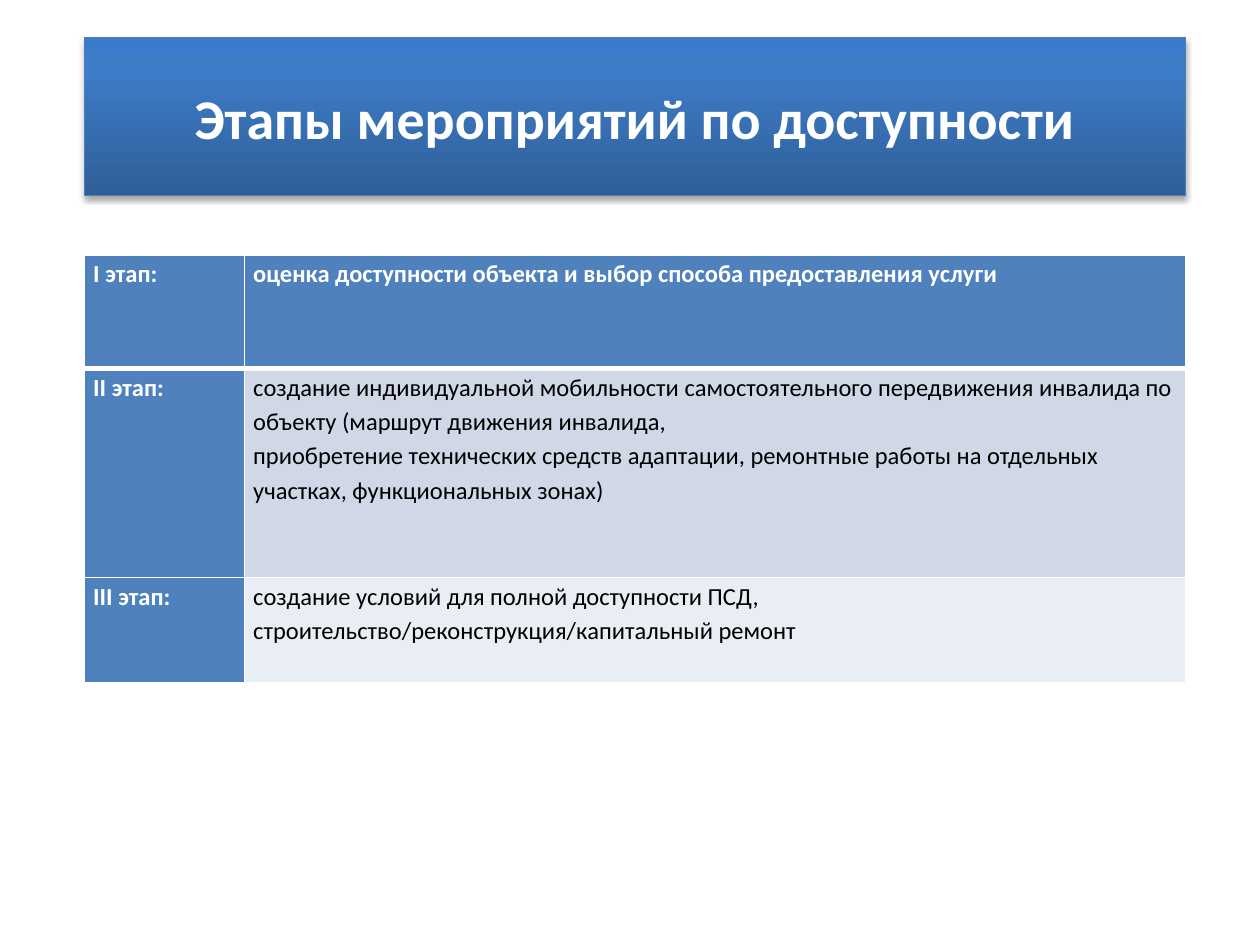
from dataclasses import dataclass

from pptx import Presentation
from pptx import oxml, util as u
from pptx.dml.color import RGBColor
from pptx.enum import text

FONT = "Calibri"
WHITE, BLACK, BLUE = "FFFFFF", "000000", "4F81BD"
NS = 'xmlns:a="http://schemas.openxmlformats.org/drawingml/2006/main"'
SLIDE_W, SLIDE_H = u.Inches(10), u.Inches(7.5)
LEFT, WIDTH = 0.067, 0.874
COLUMN_SHARES = (0.127, 0.747)


@dataclass
class Stage:
    label: str
    lines: tuple[str, ...]
    height: float
    fill: str
    color: str = BLACK
    bold: bool = False
    top: int = 1
    bottom: int = 1


STAGES = [
    Stage("I этап:",
          ("оценка доступности объекта и выбор способа предоставления услуги",),
          0.12, BLUE, WHITE, True, bottom=3),
    Stage("II этап:",
          ("создание индивидуальной мобильности самостоятельного передвижения "
           "инвалида по объекту (маршрут движения инвалида,",
           "приобретение технических средств адаптации, ремонтные работы на "
           "отдельных участках, функциональных зонах)"),
          0.221, "D0D8E8", top=3),
    Stage("III этап:",
          ("создание условий для полной доступности ПСД, "
           "строительство/реконструкция/капитальный ремонт",),
          0.111, "E9EDF4"),
]


def rgb(value: str) -> RGBColor:
    return RGBColor.from_string(value)


def across(share: float) -> int:
    return round(SLIDE_W * share)


def down(share: float) -> int:
    return round(SLIDE_H * share)


def format_paragraph(p, size: int, color: str, bold: bool) -> None:
    p.font.name, p.font.size, p.font.bold = FONT, u.Pt(size), bold
    p.font.color.rgb = rgb(color)


def add_gradient_and_shadow(sp) -> None:
    """Swap the solid fill for a vertical gradient and add a soft shadow."""
    stops = "".join(
        f'<a:gs pos="{pos * 1000}"><a:srgbClr val="{color}"/></a:gs>'
        for pos, color in ((0, "2F5F99"), (80, "3D7CC7"), (100, "3A7CCB")))
    gradient = oxml.parse_xml(
        f'<a:gradFill {NS} rotWithShape="1"><a:gsLst>{stops}</a:gsLst>'
        '<a:lin ang="16200000" scaled="0"/></a:gradFill>')
    shadow = oxml.parse_xml(
        f'<a:outerShdw {NS} blurRad="{u.Pt(3.1)}" dist="{u.Pt(1.8)}" '
        'dir="5400000" rotWithShape="0"><a:srgbClr val="000000">'
        '<a:alpha val="35000"/></a:srgbClr></a:outerShdw>')
    sp.shadow.inherit = False
    props = sp.element.spPr
    props.replace(props.find("{*}solidFill"), gradient)
    props.find("{*}effectLst").append(shadow)


def draw_title(slide, title: str) -> None:
    sp = slide.shapes.title
    sp.left, sp.top = across(LEFT), down(0.04)
    sp.width, sp.height = across(WIDTH), down(0.167)
    sp.fill.solid()
    sp.line.color.rgb = rgb("4B7EBC")
    sp.line.width = u.Pt(0.75)
    add_gradient_and_shadow(sp)
    tf = sp.text_frame
    tf.text = title
    tf.vertical_anchor = text.MSO_ANCHOR.MIDDLE
    p = tf.paragraphs[0]
    p.alignment = text.PP_ALIGN.CENTER
    format_paragraph(p, 32, WHITE, True)


def set_borders(cell, top: int, bottom: int) -> None:
    props = cell._tc.get_or_add_tcPr()
    for i, (side, width) in enumerate(zip("LRTB", (1, 1, top, bottom))):
        props.insert(i, oxml.parse_xml(
            f'<a:ln{side} {NS} w="{u.Pt(width)}"><a:solidFill>'
            f'<a:srgbClr val="{WHITE}"/></a:solidFill></a:ln{side}>'))


def fill_cell(cell, lines: tuple[str, ...], fill: str, color: str,
              bold: bool) -> None:
    cell.fill.solid()
    cell.fill.fore_color.rgb = rgb(fill)
    cell.margin_left = cell.margin_right = u.Inches(0.07)
    cell.margin_top = cell.margin_bottom = 0
    cell.text_frame.text = "\n".join(lines)
    for p in cell.text_frame.paragraphs:
        p.line_spacing = 1.15
        format_paragraph(p, 14, color, bold)


def draw_stages(slide, stages: list[Stage]) -> None:
    height = sum(stage.height for stage in stages)
    table = slide.shapes.add_table(
        len(stages), len(COLUMN_SHARES), across(LEFT), down(0.27),
        across(WIDTH), down(height)).table
    for column, share in zip(table.columns, COLUMN_SHARES):
        column.width = across(share)
    for row, stage in zip(table.rows, stages):
        row.height = down(stage.height)
        label, description = row.cells
        fill_cell(label, (stage.label,), BLUE, WHITE, True)
        fill_cell(description, stage.lines, stage.fill, stage.color, stage.bold)
        for cell in (label, description):
            set_borders(cell, stage.top, stage.bottom)


def main() -> None:
    prs = Presentation()
    prs.slide_width, prs.slide_height = SLIDE_W, SLIDE_H
    slide = prs.slides.add_slide(prs.slide_layouts[5])
    draw_title(slide, "Этапы мероприятий по доступности")
    draw_stages(slide, STAGES)
    prs.save("out.pptx")


if __name__ == "__main__":
    main()
